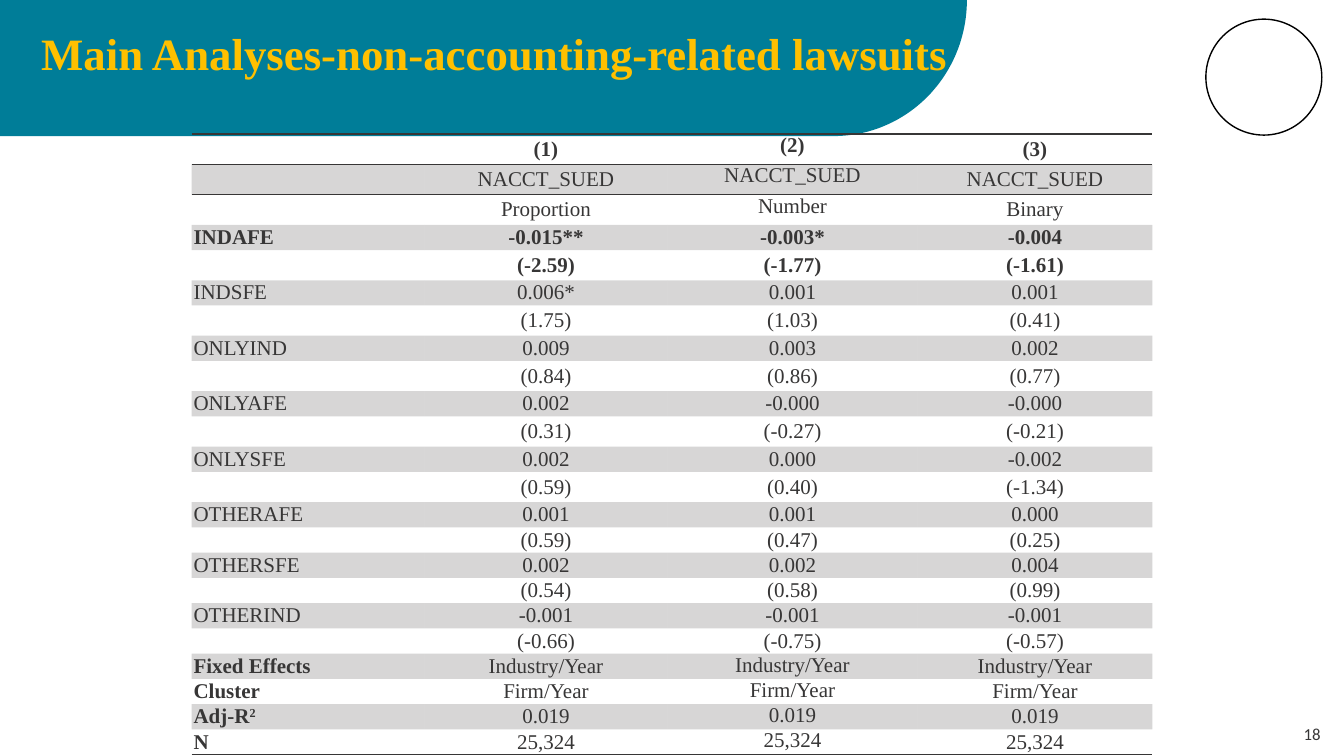
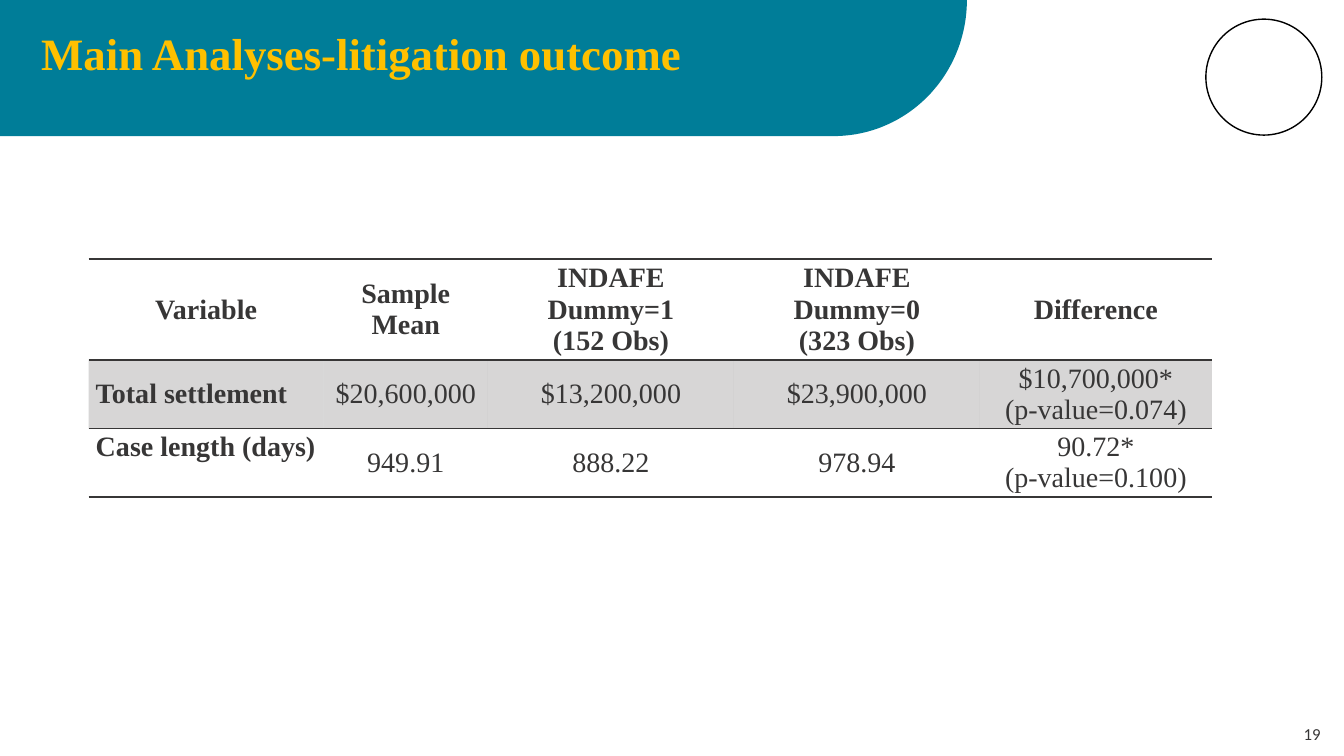
from math import cos, pi, sin

from pptx import Presentation
from pptx.dml.color import RGBColor
from pptx.enum.shapes import MSO_SHAPE as Shape
from pptx.enum.text import MSO_ANCHOR as Anchor, PP_ALIGN as Align
from pptx.oxml.ns import qn
from pptx.oxml.xmlchemy import OxmlElement
from pptx.util import Inches, Pt

# Shared look
TEAL = RGBColor(0x00, 0x7D, 0x98)
GOLD = RGBColor(0xFF, 0xC0, 0x00)
INK = RGBColor(0x37, 0x36, 0x36)
BLACK = RGBColor(0x00, 0x00, 0x00)
SERIF, SANS = "Times New Roman", "Calibri"
PLAIN_STYLE = "{2D5ABB26-0587-4C30-8999-92F81FD0307C}"

# Regression table: variable, coefficients, t-statistics
HEADINGS = [
    ("", "(1)", "(2)", "(3)"),
    ("", "NACCT_SUED", "NACCT_SUED", "NACCT_SUED"),
    ("", "Proportion", "Number", "Binary"),
]
ESTIMATES = [
    ("INDAFE", ("-0.015**", "-0.003*", "-0.004"), ("-2.59", "-1.77", "-1.61")),
    ("INDSFE", ("0.006*", "0.001", "0.001"), ("1.75", "1.03", "0.41")),
    ("ONLYIND", ("0.009", "0.003", "0.002"), ("0.84", "0.86", "0.77")),
    ("ONLYAFE", ("0.002", "-0.000", "-0.000"), ("0.31", "-0.27", "-0.21")),
    ("ONLYSFE", ("0.002", "0.000", "-0.002"), ("0.59", "0.40", "-1.34")),
    ("OTHERAFE", ("0.001", "0.001", "0.000"), ("0.59", "0.47", "0.25")),
    ("OTHERSFE", ("0.002", "0.002", "0.004"), ("0.54", "0.58", "0.99")),
    ("OTHERIND", ("-0.001", "-0.001", "-0.001"), ("-0.66", "-0.75", "-0.57")),
]
MODEL_FACTS = [
    ("Fixed Effects", "Industry/Year"),
    ("Cluster", "Firm/Year"),
    ("Adj-R^2", "0.019"),
    ("N", "25,324"),
]

OUTCOMES = [
    ("Variable", "Sample Mean", "INDAFE Dummy=1\n(152 Obs)",
     "INDAFE Dummy=0\n(323 Obs)", "Difference"),
    ("Total settlement", "$20,600,000", "$13,200,000", "$23,900,000",
     "$10,700,000*\n(p-value=0.074)"),
    ("Case length (days)", "949.91", "888.22", "978.94",
     "90.72*\n(p-value=0.100)"),
]


def add_span(para, text, font, size, color, bold=False):
    span = para.add_run()
    span.text = text
    span.font.name, span.font.size, span.font.bold = font, Pt(size), bold
    span.font.color.rgb = color
    return span


def add_text(page, area, text, font, size, color, bold=False,
             align=Align.LEFT, anchor=Anchor.TOP, spacing=None):
    box = page.shapes.add_textbox(*map(Inches, area))
    frame = box.text_frame
    frame.word_wrap, frame.vertical_anchor = True, anchor
    para = frame.paragraphs[0]
    para.alignment, para.line_spacing = align, spacing
    add_span(para, text, font, size, color, bold)


# Page frame: band, ring, title and number
def add_band(page):
    corner_x, reach, height, steps = 8.27, 1.32, 1.35, 48
    angles = [pi / 2 * step / steps for step in range(steps + 1)]
    curve = [(Inches(corner_x + reach * cos(angle)), Inches(height * sin(angle)))
             for angle in angles]
    outline = page.shapes.build_freeform(0, 0)
    outline.add_line_segments(curve + [(0, Inches(height))], close=True)
    band = outline.convert_to_shape()
    band.shadow.inherit = False
    band.fill.solid()
    band.fill.fore_color.rgb = TEAL
    band.line.fill.background()


def add_ring(page):
    ring = page.shapes.add_shape(
        Shape.OVAL, Inches(11.96), Inches(0.19), Inches(1.15), Inches(1.15))
    ring.shadow.inherit = False
    ring.fill.background()
    ring.line.color.rgb, ring.line.width = BLACK, Pt(1)


def add_page(deck, title, number):
    page = deck.slides.add_slide(deck.slide_layouts[6])
    add_band(page)
    add_ring(page)
    add_text(page, (12.7, 7.15, 0.63, 0.27), str(number), SANS, 12, INK,
             align=Align.CENTER, anchor=Anchor.MIDDLE)
    add_text(page, (0.31, 0.27, 11.5, 0.92), title, SERIF, 32, GOLD,
             bold=True, spacing=0.9)
    return page


# Table parts
def add_rule(cell, side):
    line = OxmlElement(f"a:ln{side}")
    line.set("w", str(Pt(1)))
    fill = OxmlElement("a:solidFill")
    color = OxmlElement("a:srgbClr")
    color.set("val", str(INK))
    fill.append(color)
    line.append(fill)
    cell._tc.get_or_add_tcPr().append(line)


def shade(cell):
    cell.fill.solid()
    cell.fill.fore_color.rgb = INK
    alpha = OxmlElement("a:alpha")
    alpha.set("val", "20000")
    cell._tc.tcPr.find(qn("a:solidFill")).find(qn("a:srgbClr")).append(alpha)


def fill_cell(cell, text, size, bold, align):
    """Write lines of text; a caret starts a superscript."""
    frame = cell.text_frame
    for index, line in enumerate(text.split("\n")):
        para = frame.add_paragraph() if index else frame.paragraphs[0]
        para.alignment = align
        if not line:
            para._p.get_or_add_endParaRPr().set("sz", str(size * 100))
            continue
        base, _, power = line.partition("^")
        add_span(para, base, SERIF, size, INK, bold)
        if power:
            raised = add_span(para, power, SERIF, size, INK, bold)
            raised._r.get_or_add_rPr().set("baseline", "30000")


def add_ruled_table(page, left, top, widths, heights, rows, size, margin, is_bold):
    frame = page.shapes.add_table(
        len(rows), len(widths), Inches(left), Inches(top),
        Inches(sum(widths)), Inches(sum(heights)))
    table = frame.table
    table.first_row = table.horz_banding = False
    table._tbl.tblPr.find(qn("a:tableStyleId")).text = PLAIN_STYLE
    for column, width in zip(table.columns, widths):
        column.width = Inches(width)
    for row, height in zip(table.rows, heights):
        row.height = Inches(height)
    for r, texts in enumerate(rows):
        for c, text in enumerate(texts):
            cell = table.cell(r, c)
            cell.margin_left = cell.margin_right = Inches(margin)
            cell.margin_top = cell.margin_bottom = 0
            cell.vertical_anchor = Anchor.MIDDLE
            align = Align.CENTER if c or r == 0 else Align.LEFT
            fill_cell(cell, text, size, is_bold(r, c), align)
            if r <= 1:
                add_rule(cell, "T")
            if r in (0, len(rows) - 1):
                add_rule(cell, "B")
            if r % 2:
                shade(cell)
            else:
                cell.fill.background()
    return table


# Pages
def add_lawsuit_page(deck):
    page = add_page(deck, "Main Analyses-non-accounting-related lawsuits", 18)
    rows = list(HEADINGS)
    for name, coefficients, statistics in ESTIMATES:
        rows.append((name, *coefficients))
        rows.append(("", *(f"({value})" for value in statistics)))
    facts_start = len(rows)
    rows += [(name, value, value, value) for name, value in MODEL_FACTS]

    tall_end = 13
    heights = [0.3 if r < tall_end and not row[0] else 0.25
               for r, row in enumerate(rows)]
    table = add_ruled_table(
        page, 1.9, 1.33, [2.31, 2.41, 2.48, 2.33], heights, rows, 15, 0.02,
        lambda r, c: r in (0, 3, 4) or (r >= facts_start and c == 0))
    for r in [*range(len(HEADINGS)), *range(facts_start, len(rows))]:
        table.cell(r, 2).vertical_anchor = Anchor.TOP


def add_outcome_page(deck):
    page = add_page(deck, "Main Analyses-litigation outcome", 19)
    table = add_ruled_table(
        page, 0.88, 2.57, [2.33, 1.63, 2.44, 2.44, 2.3], [1, 0.68, 0.68],
        OUTCOMES, 20, 0.07, lambda r, c: r == 0 or c == 0)
    case_length = table.cell(2, 0)
    case_length.vertical_anchor = Anchor.TOP
    case_length.margin_top = Inches(0.03)


def main():
    deck = Presentation()
    deck.slide_width, deck.slide_height = Inches(13.33), Inches(7.5)
    add_lawsuit_page(deck)
    add_outcome_page(deck)
    deck.save("out.pptx")


if __name__ == "__main__":
    main()
